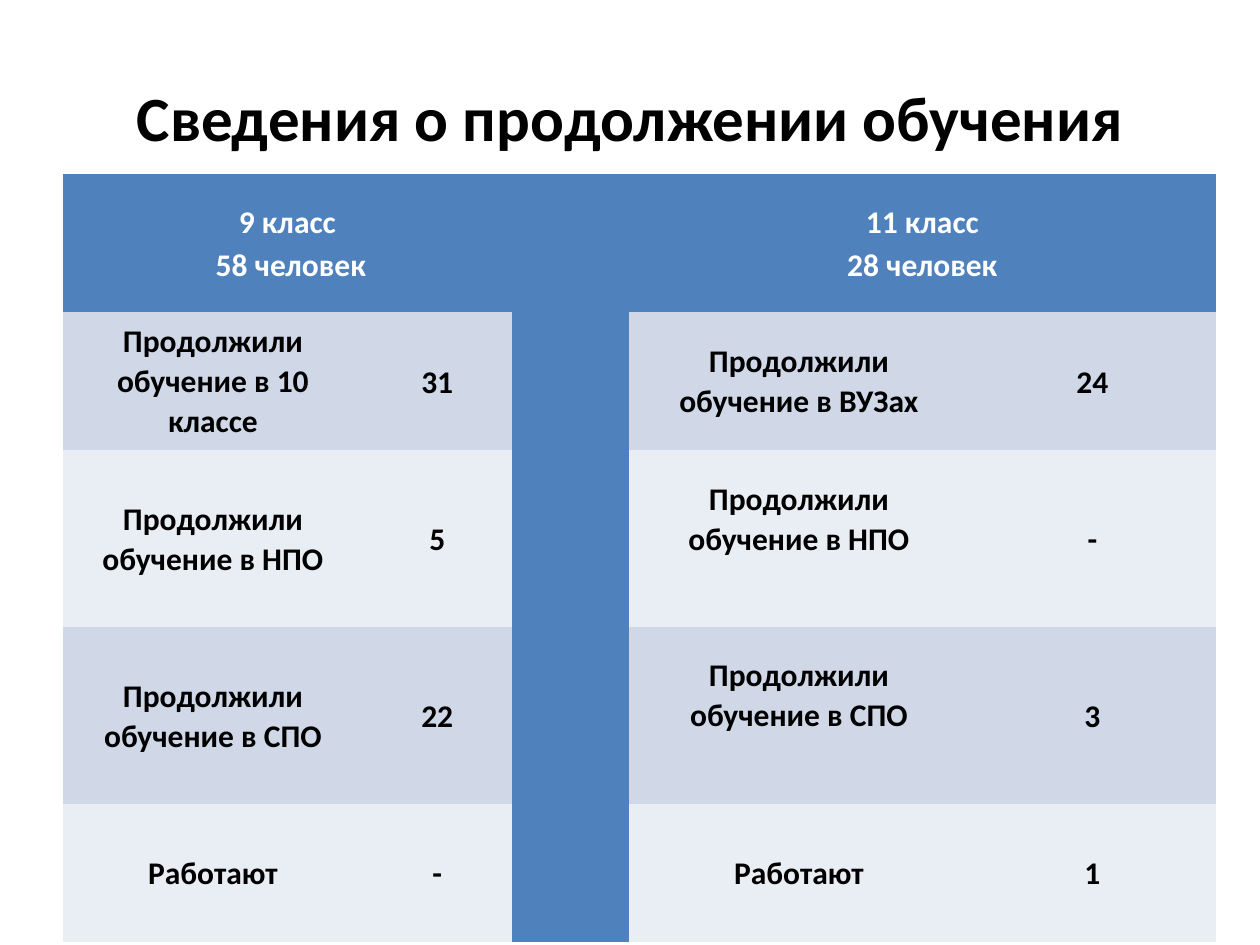
import pptx
import pptx.util
import pptx.dml.color
import pptx.enum.text

Pt = pptx.util.Pt
RGBColor = pptx.dml.color.RGBColor

BLACK = RGBColor(0x00, 0x00, 0x00)
WHITE = RGBColor(0xFF, 0xFF, 0xFF)
HEADER_BLUE = RGBColor(0x4F, 0x81, 0xBD)
BANDS = (RGBColor(0xD0, 0xD8, 0xE8), RGBColor(0xE9, 0xED, 0xF4))

PLAIN_TABLE_STYLE = "{2D5ABB26-0587-4C30-8999-92F81FD0307C}"
COLUMN_WIDTHS = (171.4, 85, 67, 194.4, 141)
ROW_HEIGHTS = (79, 79, 101, 101, 79)
DIVIDER = 2
LINE_GAP = 23

GRADE_9 = [
    ("Продолжили обучение в 10 классе", "31"),
    ("Продолжили обучение в НПО", "5"),
    ("Продолжили обучение в СПО", "22"),
    ("Работают", "-"),
]
GRADE_11 = [
    ("Продолжили обучение в ВУЗах", "24"),
    ("Продолжили обучение в НПО", "-"),
    ("Продолжили обучение в СПО", "3"),
    ("Работают", "1"),
]
RAISED_ROWS = (2, 3)


class SlideBuilder:
    def __init__(self, slide, font="Calibri"):
        self.slide = slide
        self.font = font

    def add_lines(self, frame, lines, size, color, spacings=(1,)):
        """Fill a text frame with centred bold lines, one spacing per line."""
        for index, (line, spacing) in enumerate(zip(lines, spacings)):
            paragraph = frame.paragraphs[0] if index == 0 else frame.add_paragraph()
            paragraph.alignment = pptx.enum.text.PP_ALIGN.CENTER
            paragraph.line_spacing = spacing
            run = paragraph.add_run()
            run.text = line
            run.font.name = self.font
            run.font.size = Pt(size)
            run.font.bold = True
            run.font.color.rgb = color

    def title(self, text, left, top, width, height):
        frame = self.slide.shapes.add_textbox(
            Pt(left), Pt(top), Pt(width), Pt(height)).text_frame
        frame.word_wrap = True
        frame.vertical_anchor = pptx.enum.text.MSO_ANCHOR.MIDDLE
        self.add_lines(frame, [text], 36, BLACK)

    def table(self, left, top, widths, heights):
        table = self.slide.shapes.add_table(
            len(heights), len(widths), Pt(left), Pt(top),
            Pt(sum(widths)), Pt(sum(heights))).table
        table.first_row = table.horz_banding = False
        table._tbl.tblPr[0].text = PLAIN_TABLE_STYLE
        for column, width in zip(table.columns, widths):
            column.width = Pt(width)
        for row, height in zip(table.rows, heights):
            row.height = Pt(height)
        return table

    def fill(self, cell, color):
        cell.fill.solid()
        cell.fill.fore_color.rgb = color
        cell.vertical_anchor = pptx.enum.text.MSO_ANCHOR.MIDDLE

    def cell(self, cell, lines, color, spacings):
        self.add_lines(cell.text_frame, lines, 18, color, spacings)


def main():
    presentation = pptx.Presentation()
    presentation.slide_width, presentation.slide_height = Pt(720), Pt(540)
    builder = SlideBuilder(
        presentation.slides.add_slide(presentation.slide_layouts[6]))

    builder.title("Сведения о продолжении обучения", 36, 21.6, 648, 90)
    education = builder.table(36, 99.4, COLUMN_WIDTHS, ROW_HEIGHTS)

    for row in range(len(ROW_HEIGHTS)):
        for column in range(len(COLUMN_WIDTHS)):
            is_blue = row == 0 or column == DIVIDER
            builder.fill(education.cell(row, column),
                         HEADER_BLUE if is_blue else BANDS[(row - 1) % 2])
    education.cell(0, DIVIDER).merge(
        education.cell(len(ROW_HEIGHTS) - 1, DIVIDER))

    grades = (
        (0, ("9 класс", " 58 человек"), GRADE_9),
        (DIVIDER + 1, ("11 класс", "28 человек"), GRADE_11),
    )
    for first, heading, outcomes in grades:
        header = education.cell(0, first)
        header.merge(education.cell(0, first + 1))
        builder.cell(header, heading, WHITE, (1.04, 1.12))
        for row, (outcome, count) in enumerate(outcomes, start=1):
            builder.cell(education.cell(row, first), [outcome], BLACK, (1.04,))
            count_cell = education.cell(row, first + 1)
            count_cell.margin_top = Pt(4.3)
            builder.cell(count_cell, [count], BLACK, (1.02,))

    for row in RAISED_ROWS:
        education.cell(row, DIVIDER + 1).margin_bottom = Pt(3.6 + LINE_GAP)

    presentation.save("out.pptx")


if __name__ == "__main__":
    main()
